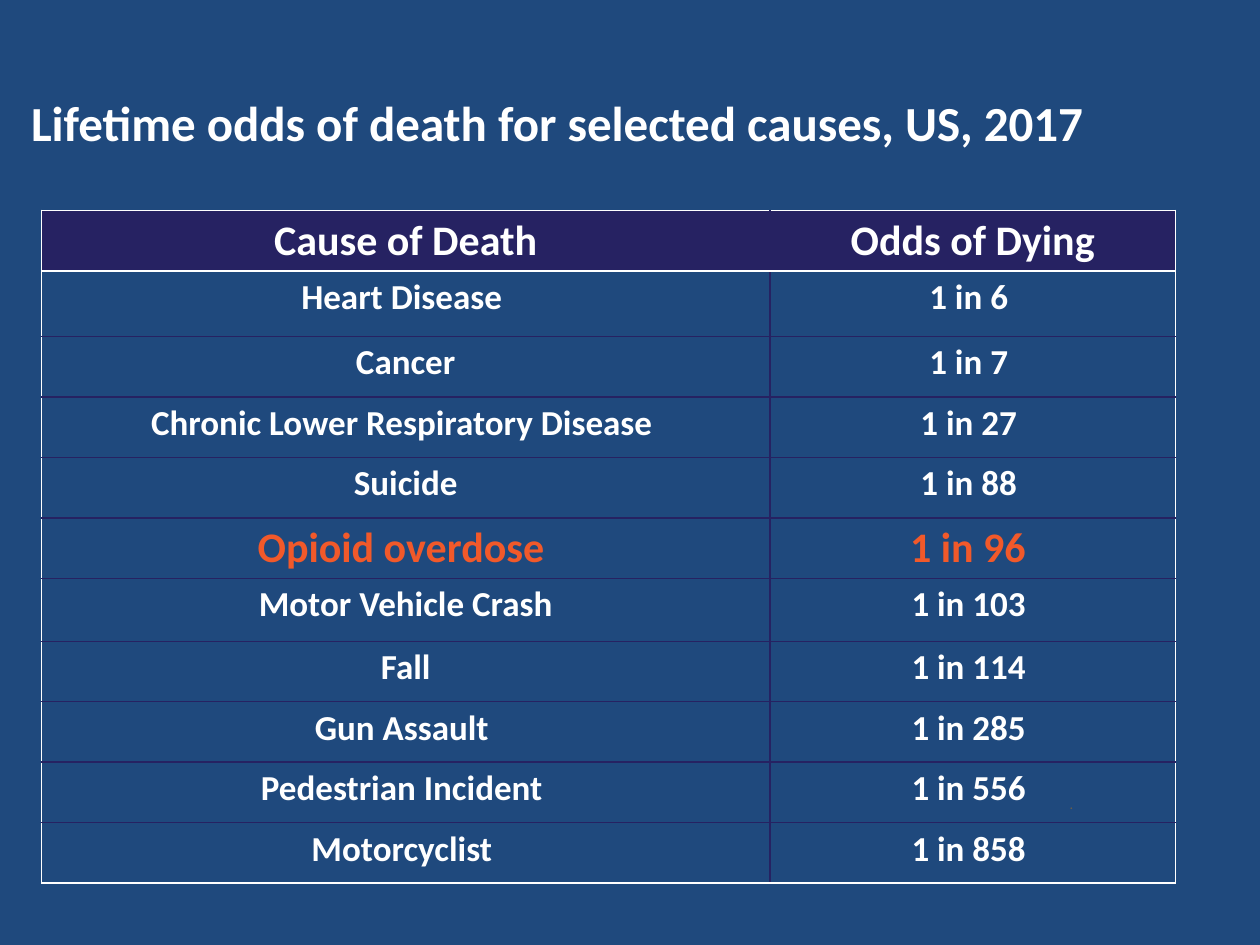
from dataclasses import dataclass

from lxml.etree import SubElement
from pptx import Presentation
from pptx.dml.color import RGBColor
from pptx.enum.text import MSO_ANCHOR, PP_ALIGN
from pptx.oxml.ns import qn
from pptx.util import Inches, Pt


@dataclass(frozen=True)
class Theme:
    font: str = "Calibri"
    background: str = "1F497D"
    text: str = "FFFFFF"
    band: str = "262262"
    accent: str = "F1592A"
    note: str = "695E4A"
    title_size: float = 28
    large_size: float = 24
    body_size: float = 20
    note_size: float = 8.2
    border_width: float = 1


THEME = Theme()
HEADINGS = ("Cause of Death", "Odds of Dying")
HIGHLIGHT = "Opioid overdose "
ODDS_BY_CAUSE = [
    ("Heart Disease ", 6),
    ("Cancer", 7),
    ("Chronic Lower Respiratory Disease ", 27),
    ("Suicide", 88),
    (HIGHLIGHT, 96),
    ("Motor Vehicle Crash", 103),
    ("Fall", 114),
    ("Gun Assault ", 285),
    ("Pedestrian Incident ", 556),
    ("Motorcyclist ", 858),
]
COLUMN_WIDTHS = (5.78, 3.22)
ROW_HEIGHT = 0.48
TALL_ROWS = {1: 0.52, 6: 0.5}


def write(frame, text, size, color, bold=True, align=PP_ALIGN.CENTER):
    """Fill a text frame with one formatted run and return its paragraph."""
    paragraph = frame.paragraphs[0]
    paragraph.alignment = align
    run = paragraph.add_run()
    run.text = text
    formats = {"name": THEME.font, "size": Pt(size), "bold": bold}
    for name, value in formats.items():
        setattr(run.font, name, value)
    run.font.color.rgb = RGBColor.from_string(color)
    return paragraph


def add_text_frame(slide, box, anchor=MSO_ANCHOR.TOP):
    frame = slide.shapes.add_textbox(*map(Inches, box)).text_frame
    frame.word_wrap = True
    frame.vertical_anchor = anchor
    return frame


def add_title(slide, box):
    frame = add_text_frame(slide, box, MSO_ANCHOR.BOTTOM)
    title = write(frame, "Lifetime odds of death for selected causes, US, 2017",
                  THEME.title_size, THEME.text)
    title.line_spacing = Pt(30)


def add_note(slide, box):
    write(add_text_frame(slide, box), ".", THEME.note_size, THEME.note,
          bold=False, align=PP_ALIGN.LEFT)


def set_borders(cell, colors):
    """Draw the cell's edges, given colours for left, right, top and bottom."""
    properties = cell._tc.get_or_add_tcPr()
    for side, color in zip("LRTB", colors):
        line = SubElement(properties, qn(f"a:ln{side}"),
                          w=str(Pt(THEME.border_width)))
        fill = SubElement(line, qn("a:solidFill"))
        SubElement(fill, qn("a:srgbClr"), val=color)


def style_cell(cell, row, column, last_row):
    """Give outer edges and the header rule the text colour, the rest the band colour."""
    white_edges = (column == 0, column == 1, row <= 1, row in (0, last_row))
    set_borders(cell, [THEME.text if white else THEME.band for white in white_edges])
    margins = {"margin_left": 0.07, "margin_right": 0.07,
               "margin_top": 0.04, "margin_bottom": 0.04}
    for name, value in margins.items():
        setattr(cell, name, Inches(value))
    if row == 0:
        cell.fill.solid()
        cell.fill.fore_color.rgb = RGBColor.from_string(THEME.band)
    else:
        cell.fill.background()


def add_odds_table(slide, box):
    records = [HEADINGS] + [(cause, f"1 in {odds} ") for cause, odds in ODDS_BY_CAUSE]
    table = slide.shapes.add_table(len(records), len(HEADINGS),
                                   *map(Inches, box)).table
    table.horz_banding = False
    for column, width in zip(table.columns, COLUMN_WIDTHS):
        column.width = Inches(width)
    for row, record in enumerate(records):
        table.rows[row].height = Inches(TALL_ROWS.get(row, ROW_HEIGHT))
        highlighted = record[0] == HIGHLIGHT
        size = THEME.large_size if row == 0 or highlighted else THEME.body_size
        color = THEME.accent if highlighted else THEME.text
        for column, text in enumerate(record):
            cell = table.cell(row, column)
            style_cell(cell, row, column, len(records) - 1)
            write(cell.text_frame, text, size, color)


def build_odds_slide(deck):
    slide = deck.slides.add_slide(deck.slide_layouts[6])
    slide.background.fill.solid()
    slide.background.fill.fore_color.rgb = RGBColor.from_string(THEME.background)
    add_title(slide, (0.08, 0.31, 8.68, 0.94))
    add_odds_table(slide, (0.33, 1.67, 9, 5.33))
    add_note(slide, (8.39, 6.26, 1.61, 0.24))


def main():
    deck = Presentation()
    deck.slide_width, deck.slide_height = Inches(10), Inches(7.5)
    build_odds_slide(deck)
    deck.save("out.pptx")


if __name__ == "__main__":
    main()
